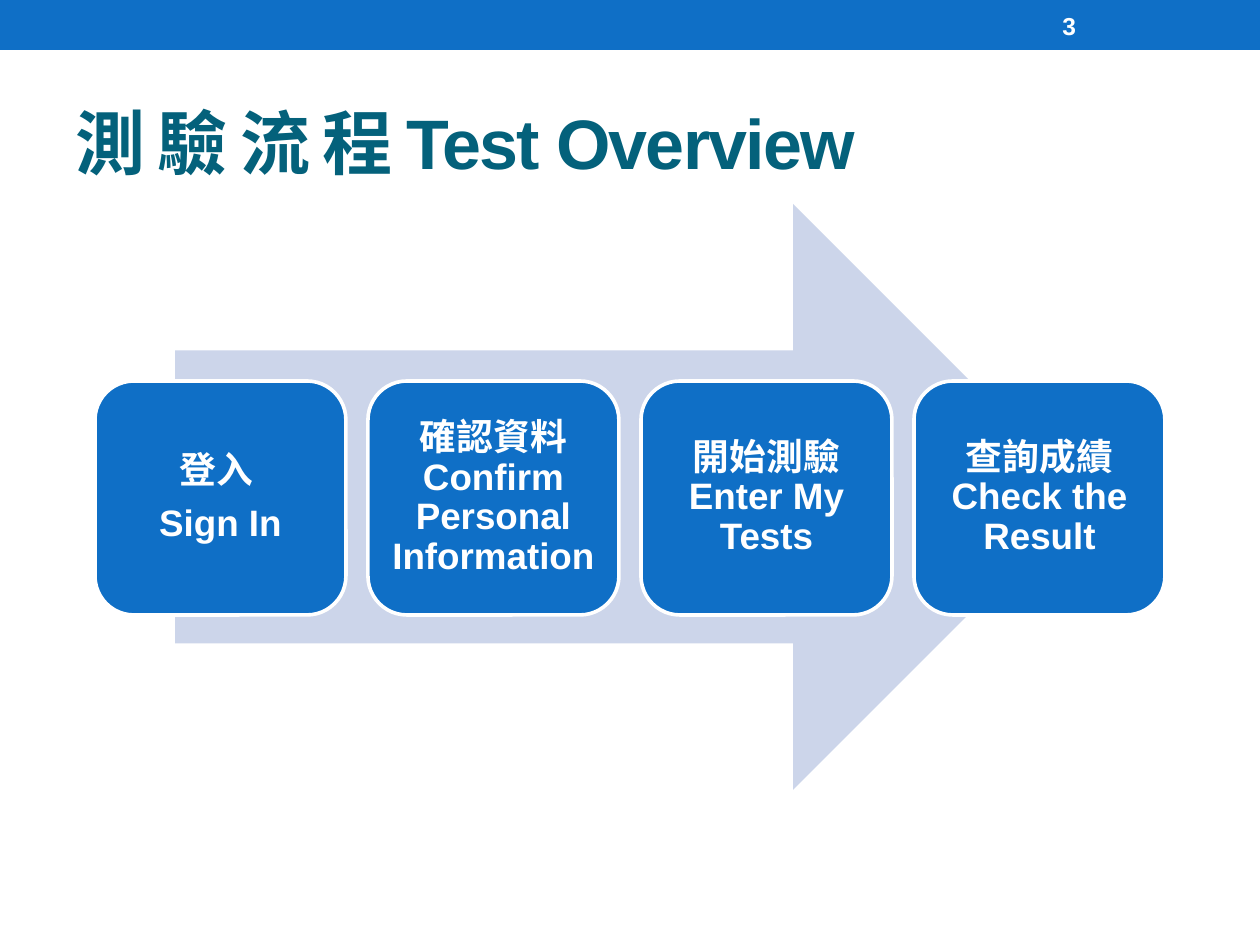
"""Build the test overview slide: four steps laid over a wide arrow."""
from dataclasses import dataclass

from pptx import Presentation
from pptx.dml.color import RGBColor
from pptx.enum.shapes import MSO_SHAPE
from pptx.enum.text import MSO_ANCHOR, MSO_AUTO_SIZE, PP_ALIGN
from pptx.util import Emu, Pt

RECTANGLE = MSO_SHAPE.RECTANGLE
ROUNDED = MSO_SHAPE.ROUNDED_RECTANGLE
ARROW = MSO_SHAPE.RIGHT_ARROW
MIDDLE = MSO_ANCHOR.MIDDLE
NO_FIT = MSO_AUTO_SIZE.NONE
LEFT = PP_ALIGN.LEFT
CENTER = PP_ALIGN.CENTER

PIXELS_PER_INCH = 126
BLUE, PALE, TEAL, WHITE = "0F6FC6", "CCD5EA", "04617B", "FFFFFF"

STEP_LEFT, STEP_TOP, STEP_WIDTH, STEP_HEIGHT = 95, 381, 251, 234
STEP_PITCH = 273
STEP_INSET = 11
STEPS = (
    ("登入 ", "Sign In"),
    ("確認資料 Confirm Personal Information",),
    ("開始測驗 Enter My Tests",),
    ("查詢成績 Check the Result",),
)


@dataclass(frozen=True)
class Area:
    """A rectangle on the slide in px."""

    left: int
    top: int
    width: int
    height: int

    def lengths(self) -> tuple:
        """Return the four lengths in EMU."""
        return tuple(map(scale, (self.left, self.top, self.width, self.height)))


@dataclass(frozen=True)
class TextStyle:
    """The look of a block of text."""

    size: int
    color: str
    paragraph: dict


TITLE_STYLE = TextStyle(40, TEAL, {"alignment": LEFT})
NUMBER_STYLE = TextStyle(14, WHITE, {"alignment": LEFT})
STEP_STYLE = TextStyle(
    21, WHITE, {"alignment": CENTER, "line_spacing": 0.9, "space_after": Pt(8)}
)


def scale(pixels: int) -> Emu:
    """Turn px into EMU."""
    return Emu(round(pixels * 914400 / PIXELS_PER_INCH))


def color_of(value: str) -> RGBColor:
    """Turn a hex string into a colour."""
    return RGBColor.from_string(value)


def apply(target, values: dict) -> None:
    """Set each named attribute on the target."""
    for name, value in values.items():
        setattr(target, name, value)


def write(frame, lines: tuple, style: TextStyle) -> None:
    """Fill a text frame with one styled paragraph per line."""
    apply(frame, {"word_wrap": True, "auto_size": NO_FIT, "vertical_anchor": MIDDLE})
    for index, line in enumerate(lines):
        para = frame.add_paragraph() if index else frame.paragraphs[0]
        apply(para, style.paragraph)
        span = para.add_run()
        span.text = line
        apply(span.font, {"name": "Arial", "size": Pt(style.size), "bold": True})
        span.font.color.rgb = color_of(style.color)


def add_block(page, kind, area: Area, fill: str):
    """Add a flat filled shape without an outline."""
    block = page.shapes.add_shape(kind, *area.lengths())
    block.shadow.inherit = False
    block.fill.solid()
    block.fill.fore_color.rgb = color_of(fill)
    block.line.fill.background()
    return block


def add_step(page, index: int, lines: tuple) -> None:
    """Add one rounded step box at its place in the row."""
    left = STEP_LEFT + index * STEP_PITCH
    area = Area(left, STEP_TOP, STEP_WIDTH, STEP_HEIGHT)
    box = add_block(page, ROUNDED, area, BLUE)
    box.line.color.rgb = color_of(WHITE)
    box.line.width = Pt(2.08)
    sides = ("left", "top", "right", "bottom")
    apply(box.text_frame, {f"margin_{side}": scale(STEP_INSET) for side in sides})
    write(box.text_frame, lines, STEP_STYLE)


def add_title(page) -> None:
    """Place and format the title placeholder."""
    title = page.shapes.title
    names = ("left", "top", "width", "height")
    apply(title, dict(zip(names, Area(63, 73, 1134, 136).lengths())))
    write(title.text_frame, ("測 驗 流 程 Test Overview",), TITLE_STYLE)
    span = title.text_frame.paragraphs[0].runs[0]
    span.font._element.set("spc", "-100")


def main() -> None:
    """Build and save the deck."""
    deck = Presentation()
    deck.slide_width, deck.slide_height = scale(1260), scale(945)
    page = deck.slides.add_slide(deck.slide_layouts[5])
    add_block(page, RECTANGLE, Area(0, 0, 1260, 50), BLUE)
    add_title(page)
    add_block(page, ARROW, Area(175, 204, 911, 586), PALE)
    for index, lines in enumerate(STEPS):
        add_step(page, index, lines)
    number = page.shapes.add_textbox(*Area(1050, 3, 147, 45).lengths())
    write(number.text_frame, ("3",), NUMBER_STYLE)
    deck.save("out.pptx")


if __name__ == "__main__":
    main()
